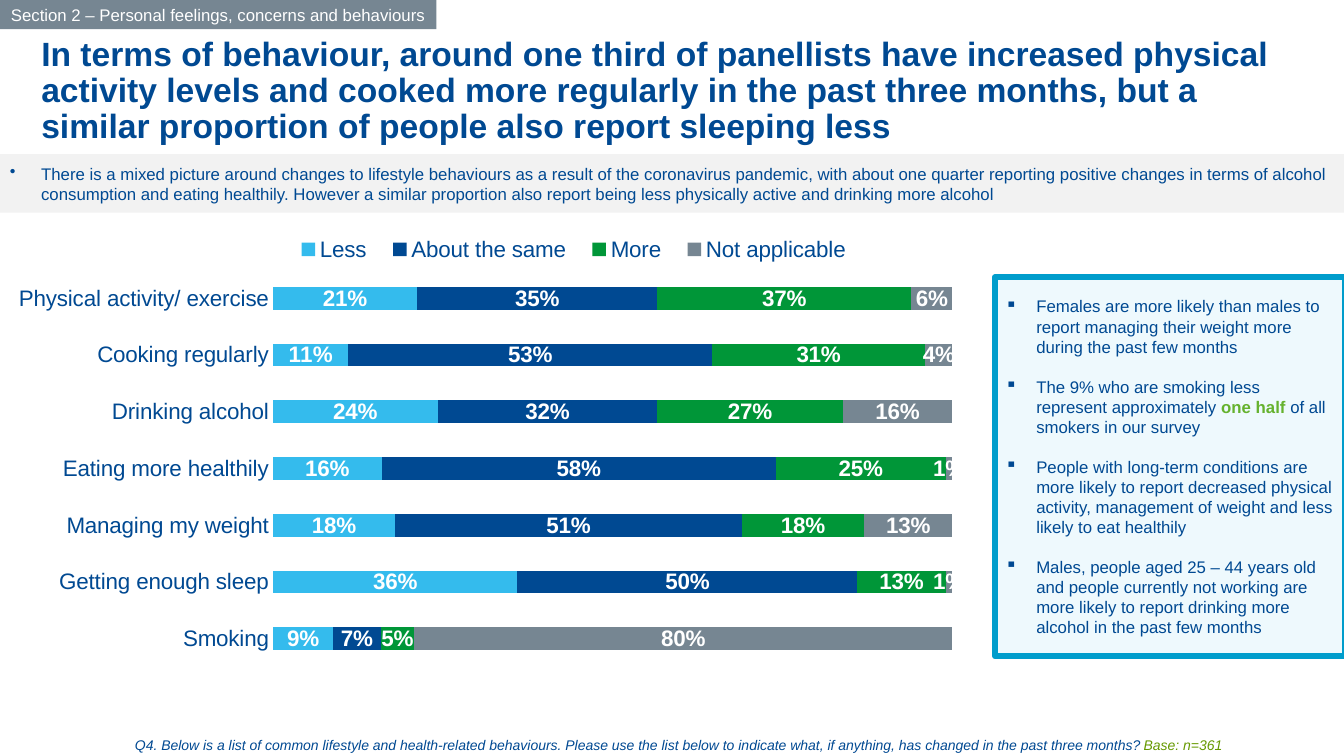
from lxml import etree
from pptx import Presentation, util as u
from pptx.chart.data import CategoryChartData
from pptx.dml.color import RGBColor
from pptx.enum import chart as ch, shapes, text
from pptx.oxml import parse_xml
from pptx.oxml.ns import nsdecls, qn

PX = 9144  # 100 px to the inch
FONT = "Arial"
NAVY = RGBColor(0x00, 0x49, 0x92)
SKY = RGBColor(0x34, 0xBB, 0xED)
GREEN = RGBColor(0x00, 0x96, 0x38)
SLATE = RGBColor(0x76, 0x86, 0x92)
LIME = RGBColor(0x65, 0xB2, 0x2E)
OLIVE = RGBColor(0x66, 0x99, 0x00)
PALE_GREY = RGBColor(0xF2, 0xF2, 0xF2)
PALE_BLUE = RGBColor(0xD6, 0xF1, 0xFB)
CYAN = RGBColor(0x00, 0x9D, 0xCC)
WHITE = RGBColor(0xFF, 0xFF, 0xFF)

TITLE = ("In terms of behaviour, around one third of panellists have increased physical "
         "activity levels and cooked more regularly in the past three months, but a similar "
         "proportion of people also report sleeping less")
SUMMARY = ("There is a mixed picture around changes to lifestyle behaviours as a result of the "
           "coronavirus pandemic, with about one quarter reporting positive changes in terms of "
           "alcohol consumption and eating healthily. However a similar proportion also report "
           "being less physically active and drinking more alcohol")
FINDINGS = [
    [("Females are more likely than males to report managing their weight more during the "
      "past few months", {})],
    [("The 9% who are smoking less represent approximately ", {}),
     ("one half ", {"color": LIME, "bold": True}),
     ("of all smokers in our survey", {})],
    [("People with long-term conditions are more likely to report decreased physical activity, "
      "management of weight and less likely to eat healthily", {})],
    [("Males, people aged 25 – 44 years old and people currently not working are more likely "
      "to report drinking more alcohol in the past few months", {})],
]
QUESTION = ("Q4. Below is a list of common lifestyle and health-related behaviours. Please use "
            "the list below to indicate what, if anything, has changed in the past three months? ")
BEHAVIOURS = ["Physical activity/ exercise", "Cooking regularly", "Drinking alcohol",
              "Eating more healthily", "Managing my weight", "Getting enough sleep", "Smoking"]
ANSWERS = [
    ("Less", SKY, (0.21, 0.11, 0.24, 0.16, 0.18, 0.36, 0.09)),
    ("About the same", NAVY, (0.35, 0.53, 0.32, 0.58, 0.51, 0.5, 0.07)),
    ("More", GREEN, (0.37, 0.31, 0.27, 0.25, 0.18, 0.13, 0.05)),
    ("Not applicable", SLATE, (0.06, 0.04, 0.16, 0.01, 0.13, 0.01, 0.8)),
]


def box(*lengths):
    return [n * PX for n in lengths]


def set_font(font, size, color=NAVY, **attrs):
    font.color.rgb = color
    for name, value in {"name": FONT, "size": u.Pt(size), **attrs}.items():
        setattr(font, name, value)


def add_run(p, words, size, **attrs):
    r = p.add_run()
    r.text = words
    set_font(r.font, size, **attrs)


def add_bullet(p, char):
    pPr = p._p.get_or_add_pPr()
    pPr.set("marL", str(31 * PX))
    pPr.set("indent", str(-31 * PX))
    etree.SubElement(pPr, qn("a:buChar")).set("char", char)


def add_panel(s, at, fill):
    sp = s.shapes.add_shape(shapes.MSO_SHAPE.RECTANGLE, *box(*at))
    sp.shadow.inherit = False
    sp.fill.solid()
    sp.fill.fore_color.rgb = fill
    sp.line.fill.background()
    tf = sp.text_frame
    tf.word_wrap = True
    tf.vertical_anchor = text.MSO_ANCHOR.MIDDLE
    tf.paragraphs[0].alignment = text.PP_ALIGN.LEFT
    return sp


def add_text(s, at):
    tf = s.shapes.add_textbox(*box(*at)).text_frame
    tf.word_wrap = True
    return tf


def add_findings(s, at):
    """Outlined, see-through panel with one bullet per finding."""
    sp = add_panel(s, at, PALE_BLUE)
    color = sp._element.spPr.find(qn("a:solidFill"))[0]
    etree.SubElement(color, qn("a:alpha")).set("val", "40000")
    sp.line.color.rgb = CYAN
    sp.line.width = u.Pt(4.5)
    tf = sp.text_frame
    for i, finding in enumerate(FINDINGS):
        p = tf.add_paragraph() if i else tf.paragraphs[0]
        p.alignment = text.PP_ALIGN.LEFT
        if i:
            p.space_before = u.Pt(14)
        add_bullet(p, "▪")
        for words, attrs in finding:
            add_run(p, words, 12, **attrs)


def set_layout(parent, before, x, y, w, h, inner=False):
    """Fix a chart part's place as fractions of the chart, ahead of the given element."""
    for old in parent.findall(qn("c:layout")):
        parent.remove(old)
    target = '<c:layoutTarget val="inner"/>' if inner else ""
    modes = '<c:xMode val="edge"/><c:yMode val="edge"/>'
    sizes = "".join(f'<c:{k} val="{v}"/>' for k, v in zip("xywh", (x, y, w, h)))
    before.addprevious(parse_xml(
        f'<c:layout {nsdecls("c")}><c:manualLayout>{target}{modes}{sizes}'
        '</c:manualLayout></c:layout>'))


def add_behaviour_chart(s, at):
    data = CategoryChartData(number_format="0%")
    data.categories = BEHAVIOURS
    for name, _, values in ANSWERS:
        data.add_series(name, values)
    chart = s.shapes.add_chart(ch.XL_CHART_TYPE.BAR_STACKED_100, *box(*at), data).chart
    set_font(chart.font, 18)
    chart.has_title = False

    chart.has_legend = True
    legend = chart.legend
    legend.position = ch.XL_LEGEND_POSITION.TOP
    legend.include_in_layout = False
    set_font(legend.font, 16)

    cat = chart.category_axis
    cat.reverse_order = True
    cat.major_tick_mark = ch.XL_TICK_MARK.NONE
    cat.format.line.fill.background()
    set_font(cat.tick_labels.font, 16)
    val = chart.value_axis
    val.has_major_gridlines = False
    val.visible = False
    val.maximum_scale = 1

    plot = chart.plots[0]
    plot.gap_width, plot.overlap, plot.vary_by_categories = 150, 100, False
    for series, (_, color, _) in zip(plot.series, ANSWERS):
        series.format.fill.solid()
        series.format.fill.fore_color.rgb = color
        labels = series.data_labels
        for name, value in {"show_value": True, "number_format": "0%",
                            "number_format_is_linked": False,
                            "position": ch.XL_LABEL_POSITION.CENTER}.items():
            setattr(labels, name, value)
        set_font(labels.font, 16, WHITE, bold=True)

    area = chart._chartSpace.chart.plotArea
    set_layout(area, area.find(qn("c:barChart")), 0.28, 0.11, 0.7, 0.87, inner=True)
    key = legend._element
    set_layout(key, key.find(qn("c:overlay")), 0.29, 0.02, 0.6, 0.09)


def main():
    prs = Presentation()
    prs.slide_width, prs.slide_height = box(1333, 750)
    s = prs.slides.add_slide(prs.slide_layouts[6])

    tf = add_text(s, (17, 32, 1284, 113))
    tf.margin_left = tf.margin_right = 24 * PX
    p = tf.paragraphs[0]
    p.line_spacing = 0.9
    add_run(p, TITLE, 24, bold=True)

    p = add_panel(s, (0, 153, 1333, 58), PALE_GREY).text_frame.paragraphs[0]
    add_bullet(p, "•")
    add_run(p, SUMMARY, 12)

    add_behaviour_chart(s, (1, 218, 963, 453))
    add_findings(s, (987, 275, 347, 376))

    p = add_panel(s, (0, 0, 433, 29), SLATE).text_frame.paragraphs[0]
    p.alignment = text.PP_ALIGN.CENTER
    add_run(p, "Section 2 – Personal feelings, concerns and behaviours", 12, color=WHITE)

    p = add_text(s, (124, 726, 1106, 27)).paragraphs[0]
    add_run(p, QUESTION, 10, italic=True)
    add_run(p, "Base: n=361", 10, color=OLIVE, italic=True)

    prs.save("out.pptx")


if __name__ == "__main__":
    main()
